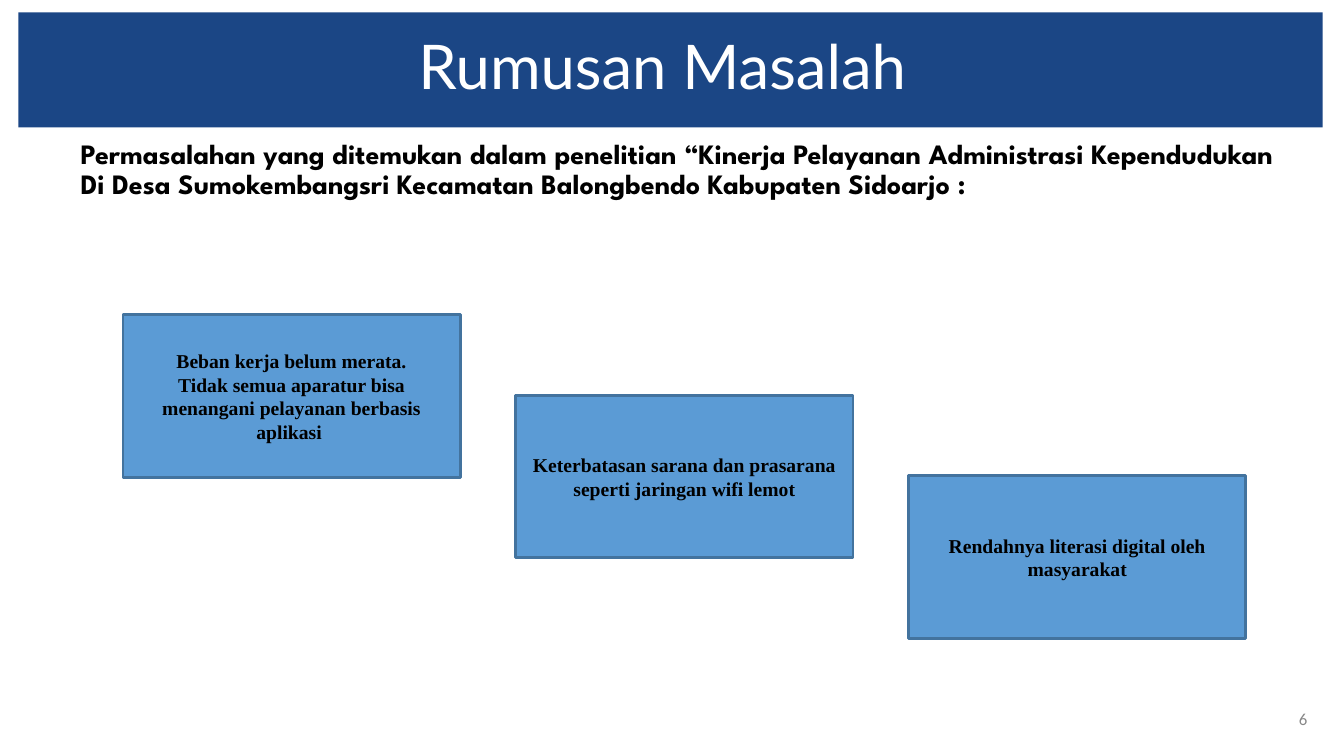
from dataclasses import dataclass
from lxml.etree import SubElement
from pptx import Presentation
from pptx.dml.color import RGBColor as RGB
from pptx.enum.shapes import MSO_SHAPE as SHAPE
from pptx.enum.text import MSO_ANCHOR as ANCHOR, MSO_AUTO_SIZE as AUTO, PP_ALIGN as ALIGN
from pptx.oxml.ns import qn
from pptx.util import Cm, Pt


@dataclass(frozen=True)
class Theme:
    white: str = "FFFFFF"
    black: str = "000000"
    gray: str = "888888"
    navy: str = "1B4685"
    blue: str = "5B9BD5"
    edge: str = "43739E"
    title_font: str = "Lato"
    lead_font: str = "League Spartan"
    box_font: str = "Times New Roman"
    number_font: str = "Calibri"
    title_size: int = 44
    lead_size: int = 20
    box_size: int = 14
    number_size: int = 12


def write(tf, text, font, size, color, bold=False, align=ALIGN.CENTER,
          spacing=1.0, margin=None, anchor=ANCHOR.MIDDLE):
    tf.word_wrap = True
    tf.auto_size = AUTO.NONE
    tf.vertical_anchor = anchor
    for i, line in enumerate(text.split("\n")):
        p = tf.paragraphs[0] if i == 0 else tf.add_paragraph()
        p.alignment = align
        p.line_spacing = spacing
        p.space_before = Pt(0)
        if margin is not None:
            pPr = p._p.get_or_add_pPr()
            pPr.set("marL", str(margin))
            pPr.set("indent", "0")
            SubElement(pPr, qn("a:buNone"))
        r = p.add_run()
        r.text = line
        r.font.name = font
        r.font.size = Pt(size)
        r.font.bold = bold
        r.font.color.rgb = RGB.from_string(color)


class Deck:
    def __init__(self, theme):
        self.theme = theme
        self.prs = Presentation()
        self.prs.slide_width = Cm(33.87)
        self.prs.slide_height = Cm(19.05)
        self.slide = self.prs.slides.add_slide(self.prs.slide_layouts[1])

    def place(self, sp, left, top, width, height):
        sp.left, sp.top, sp.width, sp.height = map(Cm, (left, top, width, height))

    def fill(self, sp, color):
        sp.fill.solid()
        sp.fill.fore_color.rgb = RGB.from_string(color)

    def title(self, text, *area):
        t = self.theme
        sp = self.slide.shapes.title
        self.place(sp, *area)
        self.fill(sp, t.navy)
        write(sp.text_frame, text, t.title_font, t.title_size, t.white, spacing=0.9)

    def lead(self, text, *area):
        t = self.theme
        sp = self.slide.placeholders[1]
        self.place(sp, *area)
        write(sp.text_frame, text, t.lead_font, t.lead_size, t.black, bold=True,
              align=ALIGN.JUSTIFY, spacing=0.9, margin=Cm(0.15), anchor=ANCHOR.TOP)

    def box(self, text, *area):
        t = self.theme
        sp = self.slide.shapes.add_shape(SHAPE.RECTANGLE, *map(Cm, area))
        sp.shadow.inherit = False
        self.fill(sp, t.blue)
        sp.line.color.rgb = RGB.from_string(t.edge)
        sp.line.width = Pt(2)
        write(sp.text_frame, text, t.box_font, t.box_size, t.black, bold=True)

    def number(self, text, *area):
        t = self.theme
        sp = self.slide.shapes.add_textbox(*map(Cm, area))
        write(sp.text_frame, text, t.number_font, t.number_size, t.gray, align=ALIGN.RIGHT)


def main():
    deck = Deck(Theme())
    deck.title("Rumusan Masalah ", 0.46, 0.31, 32.87, 2.9)
    deck.lead("Permasalahan yang ditemukan dalam penelitian “Kinerja Pelayanan "
              "Administrasi Kependudukan Di Desa Sumokembangsri Kecamatan "
              "Balongbendo Kabupaten Sidoarjo :", 1.63, 3.4, 30.73, 2.92)
    problems = [
        "Beban kerja belum merata.\n"
        "Tidak semua aparatur bisa menangani pelayanan berbasis aplikasi ",
        "Keterbatasan sarana dan prasarana seperti jaringan wifi lemot",
        "Rendahnya literasi digital oleh masyarakat",
    ]
    for i, problem in enumerate(problems):
        deck.box(problem, 3.1 + 9.9 * i, 7.93 + 2.03 * i, 8.5, 4.1)
    deck.number("6", 31.75, 17.6, 1.45, 1.02)
    deck.prs.save("out.pptx")


if __name__ == "__main__":
    main()
